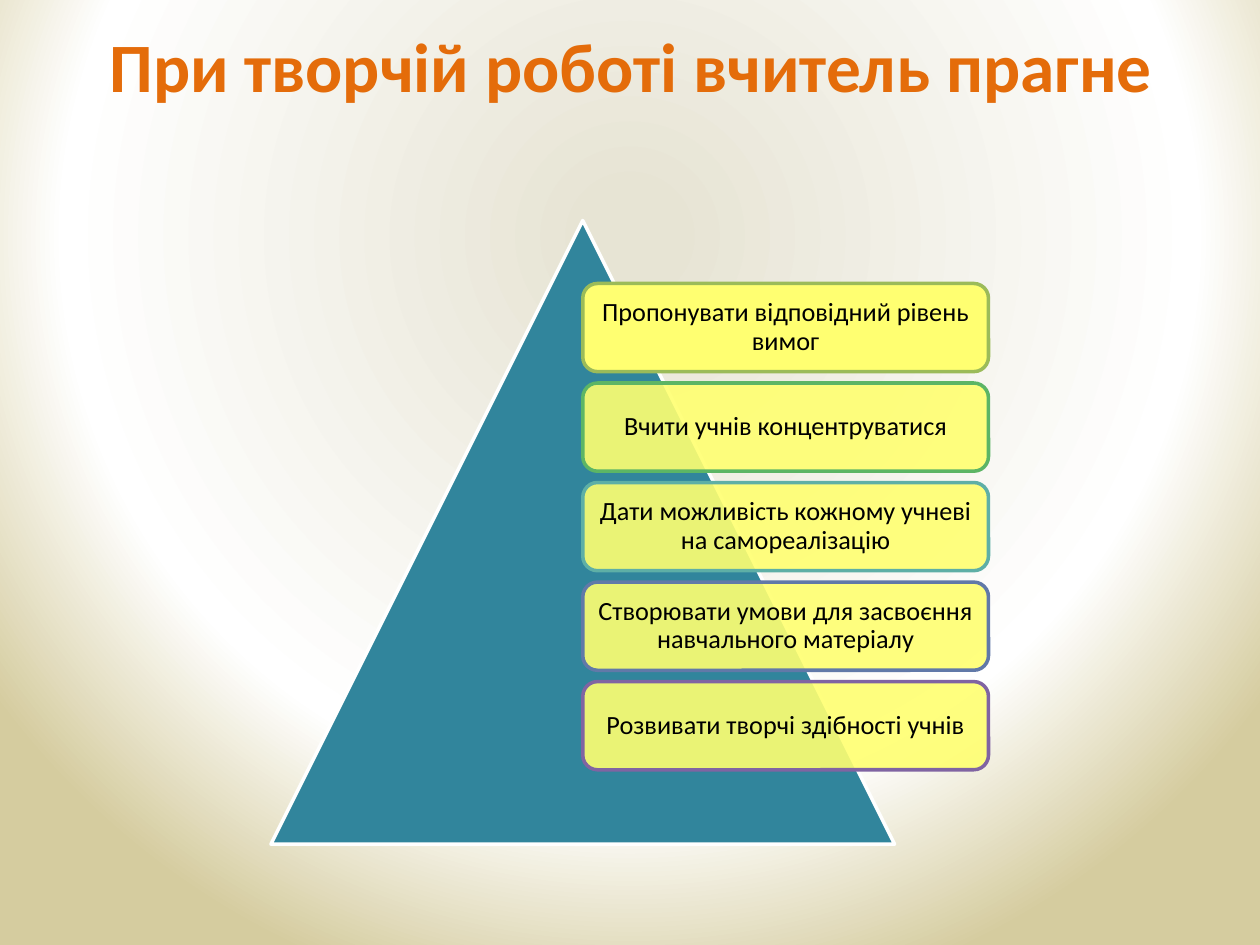
from dataclasses import dataclass

import pptx
import pptx.dml.color
import pptx.enum.shapes
import pptx.enum.text
import pptx.oxml
import pptx.oxml.ns
import pptx.util
from pptx.util import Inches

MSO_SHAPE = pptx.enum.shapes.MSO_SHAPE


@dataclass(frozen=True)
class Theme:
    font: str = "Calibri"
    title: str = "E46C0A"
    text: str = "000000"
    pyramid: str = "31859C"
    pyramid_line: str = "FFFFFF"
    card: str = "FFFF71"
    backdrop: tuple = ((5, "E7E4D4"), (72, "FFFFFF"), (100, "D5CC9F"))
    title_size: float = 39.6
    card_size: float = 15
    line_width: float = 2


THEME = Theme()

TITLE = "При творчій роботі вчитель прагне"
# Wording, outline colour, fill opacity in percent
GOALS = [
    ("Пропонувати відповідний рівень вимог", "9BBB59", 100),
    ("Вчити учнів концентруватися", "5CB565", 90),
    ("Дати можливість кожному учневі на самореалізацію", "5EAFA6", 90),
    ("Створювати умови для засвоєння навчального матеріалу", "6179A8", 90),
    ("Розвивати творчі здібності учнів", "8064A2", 90),
]


def rgb(value):
    return pptx.dml.color.RGBColor.from_string(value)


def write_text(shape, text, size, color, inset, bold=False):
    """Set one centred paragraph with equal insets."""
    tf = shape.text_frame
    tf.word_wrap = True
    tf.vertical_anchor = pptx.enum.text.MSO_ANCHOR.MIDDLE
    tf.margin_left = tf.margin_right = tf.margin_top = tf.margin_bottom = inset
    tf.text = text
    p = tf.paragraphs[0]
    p.alignment = pptx.enum.text.PP_ALIGN.CENTER
    font = p.runs[0].font
    font.name, font.size, font.bold = THEME.font, pptx.util.Pt(size), bold
    font.color.rgb = rgb(color)
    return p


def add_outlined(shapes, kind, box, fill, line):
    sp = shapes.add_shape(kind, *box)
    sp.shadow.inherit = False
    sp.fill.solid()
    sp.fill.fore_color.rgb = rgb(fill)
    sp.line.color.rgb = rgb(line)
    sp.line.width = pptx.util.Pt(THEME.line_width)
    return sp


def set_opacity(sp, percent):
    color = sp.fill._xPr.find(".//" + pptx.oxml.ns.qn("a:srgbClr"))
    alpha = color.makeelement(pptx.oxml.ns.qn("a:alpha"), {"val": str(percent * 1000)})
    color.append(alpha)


def paint_background(s):
    """Fill the slide with a circular gradient centred in its upper part."""
    s.background.fill.gradient()
    old = s.element.find(".//" + pptx.oxml.ns.qn("a:gradFill"))
    stops = "".join(
        f'<a:gs pos="{pos * 1000}"><a:srgbClr val="{color}"/></a:gs>'
        for pos, color in THEME.backdrop
    )
    grad = pptx.oxml.parse_xml(
        f'<a:gradFill {pptx.oxml.ns.nsdecls("a")} rotWithShape="1">'
        f"<a:gsLst>{stops}</a:gsLst>"
        '<a:path path="circle">'
        '<a:fillToRect l="20000" t="10000" r="20000" b="60000"/>'
        "</a:path></a:gradFill>"
    )
    old.getparent().replace(old, grad)


def add_title(s, left, top, width, height):
    sp = s.shapes.add_textbox(left, top, width, height)
    write_text(sp, TITLE, THEME.title_size, THEME.title, Inches(0.05), bold=True)


def add_pyramid_list(s, left, top, side):
    """Place a triangle with a column of cards starting at its middle."""
    shapes = s.shapes.add_group_shape().shapes
    add_outlined(shapes, MSO_SHAPE.ISOSCELES_TRIANGLE, (left, top, side, side),
                 THEME.pyramid, THEME.pyramid_line)
    card_left, card_top = left + side // 2, top + Inches(0.5)
    width, height, step = Inches(3.22), Inches(0.7), Inches(0.79)
    for i, (text, line, opacity) in enumerate(GOALS):
        box = (card_left, card_top + i * step, width, height)
        sp = add_outlined(shapes, MSO_SHAPE.ROUNDED_RECTANGLE, box, THEME.card, line)
        if opacity < 100:
            set_opacity(sp, opacity)
        p = write_text(sp, text, THEME.card_size, THEME.text, Inches(0.09))
        p.line_spacing = 0.9


def main():
    prs = pptx.Presentation()
    prs.slide_width, prs.slide_height = Inches(10), Inches(7.5)
    s = prs.slides.add_slide(prs.slide_layouts[6])
    paint_background(s)
    add_title(s, Inches(0.51), Inches(0.13), Inches(9), Inches(0.77))
    add_pyramid_list(s, Inches(2.15), Inches(1.75), Inches(4.95))
    prs.save("out.pptx")


if __name__ == "__main__":
    main()
